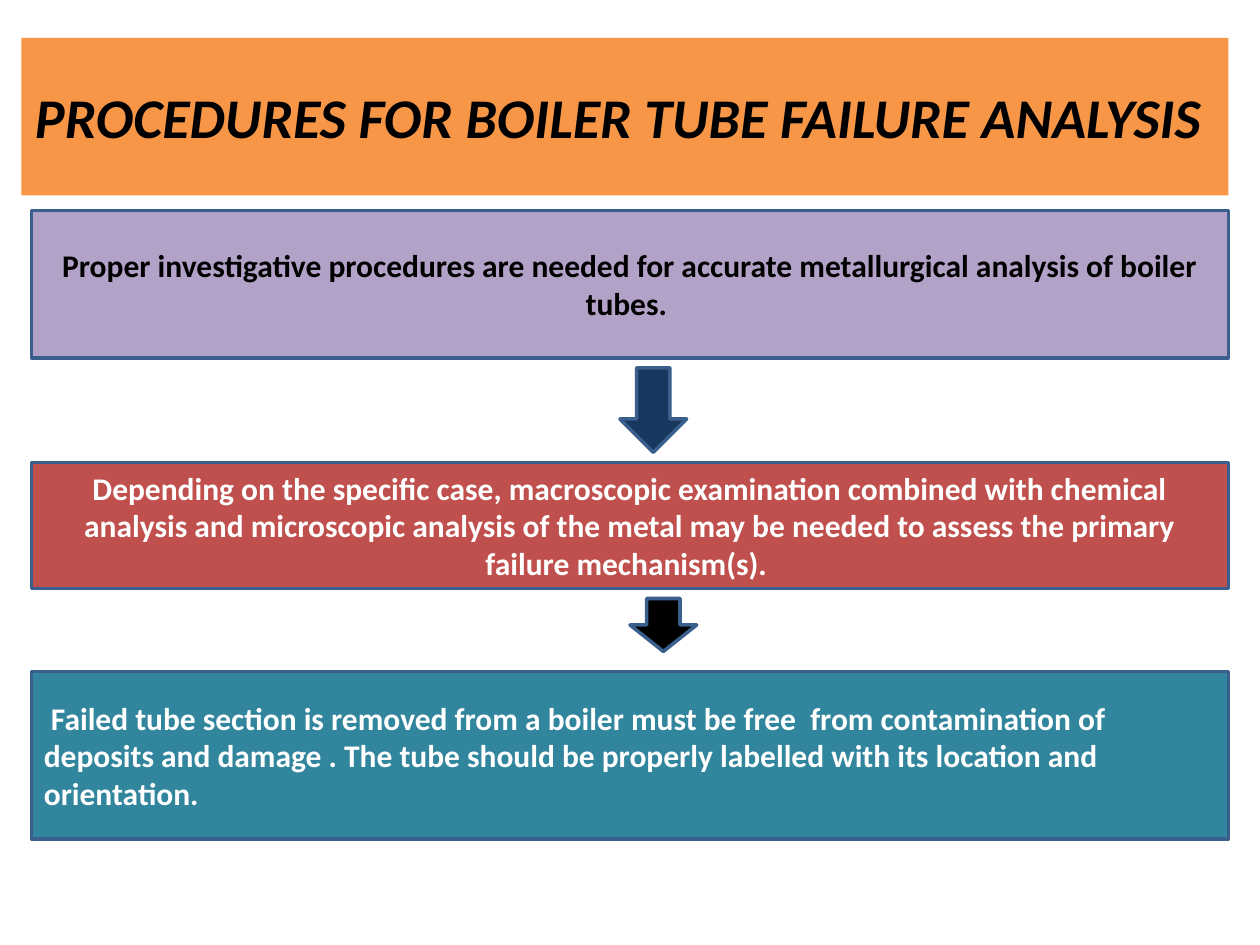
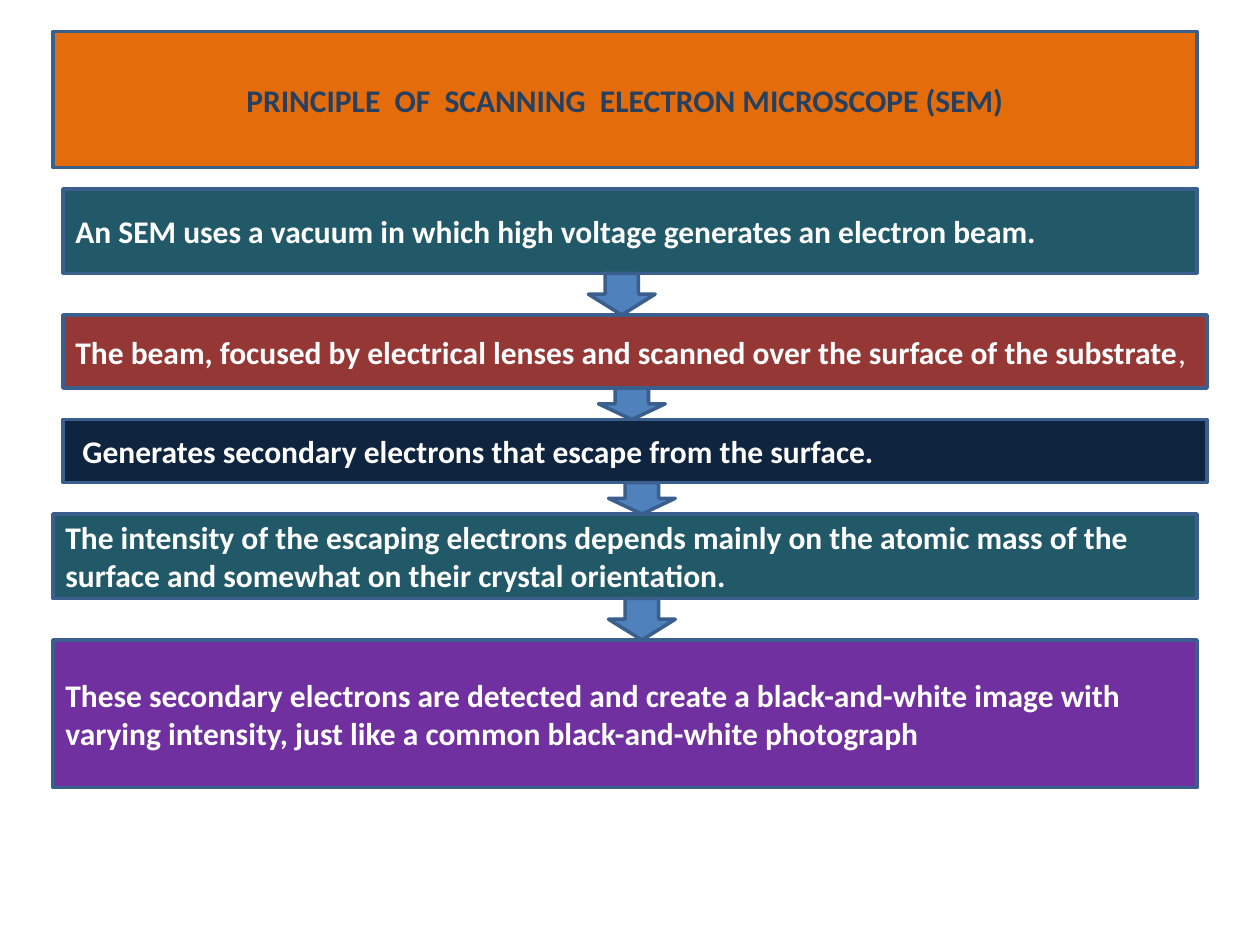
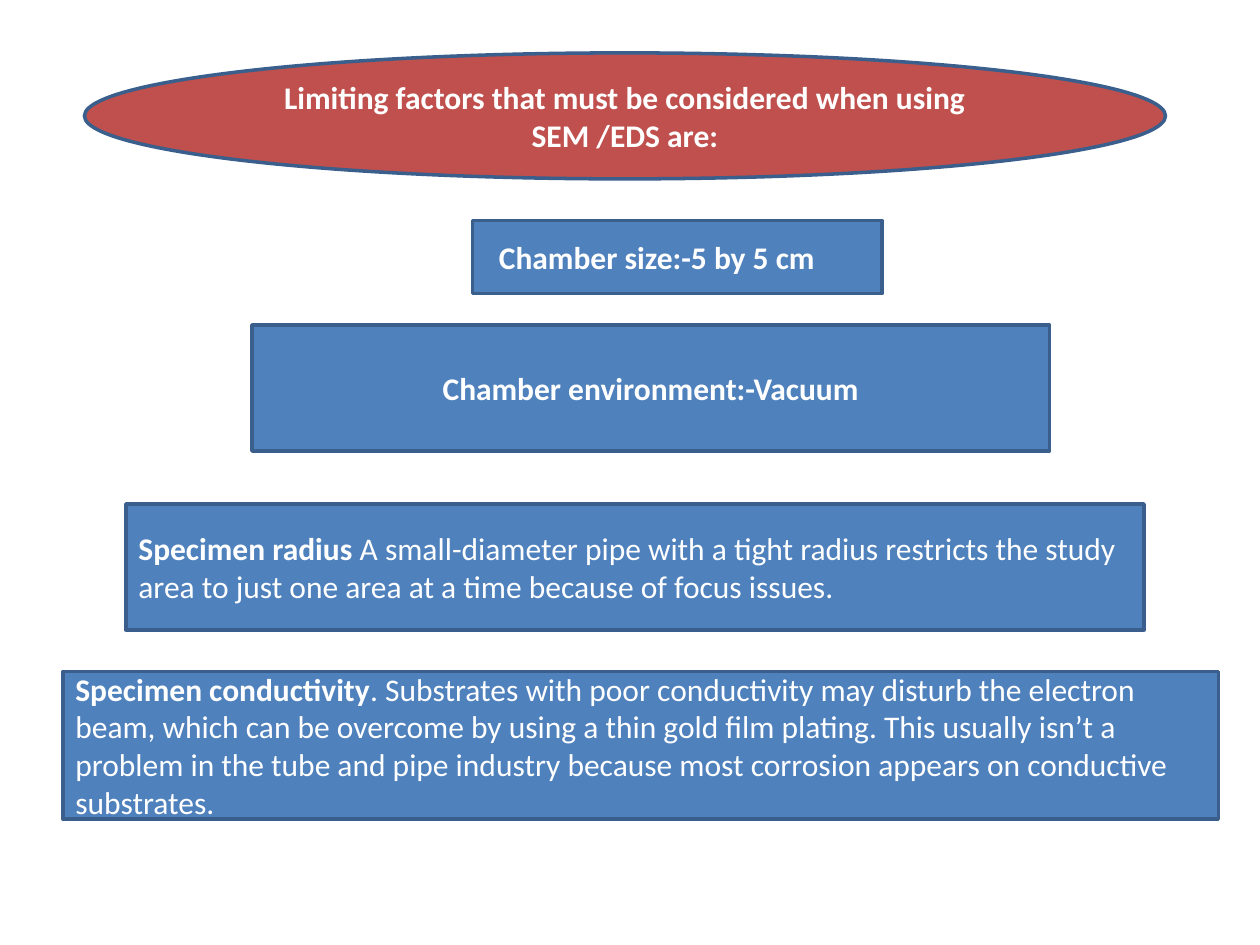
"""Build three slides on boiler tube failure and electron microscopy."""
from pptx import Presentation
from pptx.dml.color import RGBColor as RGB
from pptx.enum.shapes import MSO_SHAPE as Shape
from pptx.enum.text import MSO_ANCHOR as Anchor, MSO_AUTO_SIZE as Fit, PP_ALIGN as Align
from pptx.util import Inches, Pt

WHITE = RGB(0xFF, 0xFF, 0xFF)
BLACK = RGB(0x00, 0x00, 0x00)
EDGE = RGB(0x3A, 0x5F, 0x8C)
BLUE = RGB(0x4F, 0x81, 0xBD)
NAVY = RGB(0x17, 0x37, 0x5E)
INK = RGB(0x25, 0x40, 0x61)
NIGHT = RGB(0x0F, 0x24, 0x3E)
AMBER = RGB(0xF7, 0x96, 0x46)
ORANGE = RGB(0xE4, 0x6C, 0x0A)
LILAC = RGB(0xB3, 0xA2, 0xC7)
PURPLE = RGB(0x70, 0x30, 0xA0)
RED = RGB(0xC0, 0x50, 0x4D)
WINE = RGB(0x95, 0x37, 0x35)
AQUA = RGB(0x31, 0x85, 0x9C)
TEAL = RGB(0x21, 0x59, 0x68)

FONT = "Calibri"
MID, LEFT = Align.CENTER, Align.LEFT
ARROW = 0.53

TUBE = "PROCEDURES FOR BOILER TUBE FAILURE ANALYSIS "
TUBE_STEPS = [
    ((0.25, 1.67, 9.5, 1.17), LILAC, BLACK, MID,
     "Proper investigative procedures are needed for accurate metallurgical "
     "analysis of boiler tubes. "),
    ((0.25, 3.67, 9.5, 1), RED, WHITE, MID,
     "Depending on the specific case, macroscopic examination combined with "
     "chemical analysis and microscopic analysis of the metal may be needed "
     "to assess the primary failure mechanism(s). "),
    ((0.25, 5.33, 9.5, 1.33), AQUA, WHITE, LEFT,
     " Failed tube section is removed from a boiler must be free  from "
     "contamination of deposits and damage . The tube should be properly "
     "labelled with its location and orientation."),
]
TUBE_ARROWS = [(4.92, NAVY, 0.08, 0.08), (5, BLACK, 0.08, 0.16)]

SEM = "PRINCIPLE  OF  SCANNING  ELECTRON MICROSCOPE (SEM)"
SEM_STEPS = [
    ((0.5, 1.5, 9, 0.67), TEAL, WHITE, LEFT,
     "An SEM uses a vacuum in which high voltage generates an electron beam."),
    ((0.5, 2.5, 9.08, 0.58), WINE, WHITE, LEFT,
     "The beam, focused by electrical lenses and scanned over the surface of "
     "the substrate", ","),
    ((0.5, 3.33, 9.08, 0.5), NIGHT, WHITE, LEFT,
     " Generates secondary electrons that escape from the surface."),
    ((0.42, 4.08, 9.08, 0.67), TEAL, WHITE, LEFT,
     "The intensity of the escaping electrons depends mainly on the atomic "
     "mass of the surface and somewhat on their crystal orientation."),
    ((0.42, 5.08, 9.08, 1.17), PURPLE, WHITE, LEFT,
     "These secondary electrons are detected and create a black-and-white "
     "image with varying intensity, just like a common black-and-white "
     "photograph"),
]
SEM_ARROWS = [(left, BLUE, 0, 0) for left in (4.67, 4.75, 4.83, 4.83)]

LIMITS = "Limiting factors that must be considered when using SEM /EDS are:"
FACTORS = [
    ((3.75, 1.75, 3.25, 0.58), BLUE, WHITE, LEFT, "Chamber size:-5 by 5 cm"),
    ((2, 2.58, 6.33, 1), BLUE, WHITE, MID, "Chamber environment:-Vacuum"),
    ((1, 4, 8.08, 1), BLUE, WHITE, LEFT, "Specimen radius ",
     "A small-diameter pipe with a tight radius restricts the study area to "
     "just one area at a time because of focus issues."),
    ((0.5, 5.33, 9.17, 1.17), BLUE, WHITE, LEFT, "Specimen conductivity",
     ". Substrates with poor conductivity may disturb the electron beam, "
     "which can be overcome by using a thin gold film plating. This usually "
     "isn’t a problem in the tube and pipe industry because most corrosion "
     "appears on conductive substrates."),
]


def paint(shape, fill, line=EDGE):
    shape.fill.solid()
    shape.fill.fore_color.rgb = fill
    if line is not None:
        shape.line.color.rgb = line
        shape.line.width = Pt(2)


def write(shape, color, align, bold, plain="", size=18):
    frame = shape.text_frame
    frame.word_wrap = True
    frame.auto_size = Fit.NONE
    frame.vertical_anchor = Anchor.MIDDLE
    para = frame.paragraphs[0]
    para.alignment = align
    font = para.font
    font.name, font.size, font.bold = FONT, Pt(size), True
    font.color.rgb = color
    para.add_run().text = bold
    if plain:
        run = para.add_run()
        run.text = plain
        run.font.bold = False
    return para


def draw(slide, kind, place, fill):
    shape = slide.shapes.add_shape(kind, *map(Inches, place))
    shape.shadow.inherit = False
    paint(shape, fill)
    return shape


def head(slide, text, place, fill, color, line=EDGE, size=18):
    title = slide.shapes.title
    title.left, title.top, title.width, title.height = map(Inches, place)
    paint(title, fill, line)
    return write(title, color, MID, text, size=size)


def stack(slide, steps):
    boxes = []
    for place, fill, color, align, *text in steps:
        box = draw(slide, Shape.RECTANGLE, place, fill)
        write(box, color, align, *text)
        boxes.append(box)
    return boxes


def link(slide, steps, arrows):
    for step, after, arrow in zip(steps, steps[1:], arrows):
        left, fill, above, below = arrow
        top = step[0][1] + step[0][3] + above
        high = after[0][1] - below - top
        draw(slide, Shape.DOWN_ARROW, (left, top, ARROW, high), fill)


def main():
    deck = Presentation()
    deck.slide_width, deck.slide_height = Inches(10), Inches(7.5)
    titled, blank = deck.slide_layouts[5], deck.slide_layouts[6]

    slide = deck.slides.add_slide(titled)
    para = head(slide, TUBE, (0.17, 0.3, 9.58, 1.25), AMBER, BLACK, None, 32)
    para.font.italic = True
    stack(slide, TUBE_STEPS)
    link(slide, TUBE_STEPS, TUBE_ARROWS)

    slide = deck.slides.add_slide(titled)
    head(slide, SEM, (0.42, 0.25, 9.08, 1.08), ORANGE, INK)
    stack(slide, SEM_STEPS)
    link(slide, SEM_STEPS, SEM_ARROWS)

    slide = deck.slides.add_slide(blank)
    oval = draw(slide, Shape.OVAL, (0.67, 0.42, 8.58, 1), RED)
    write(oval, WHITE, MID, LIMITS)
    size = stack(slide, FACTORS)[0]
    size.text_frame.margin_left = Inches(0.21)

    deck.save("out.pptx")


if __name__ == "__main__":
    main()
